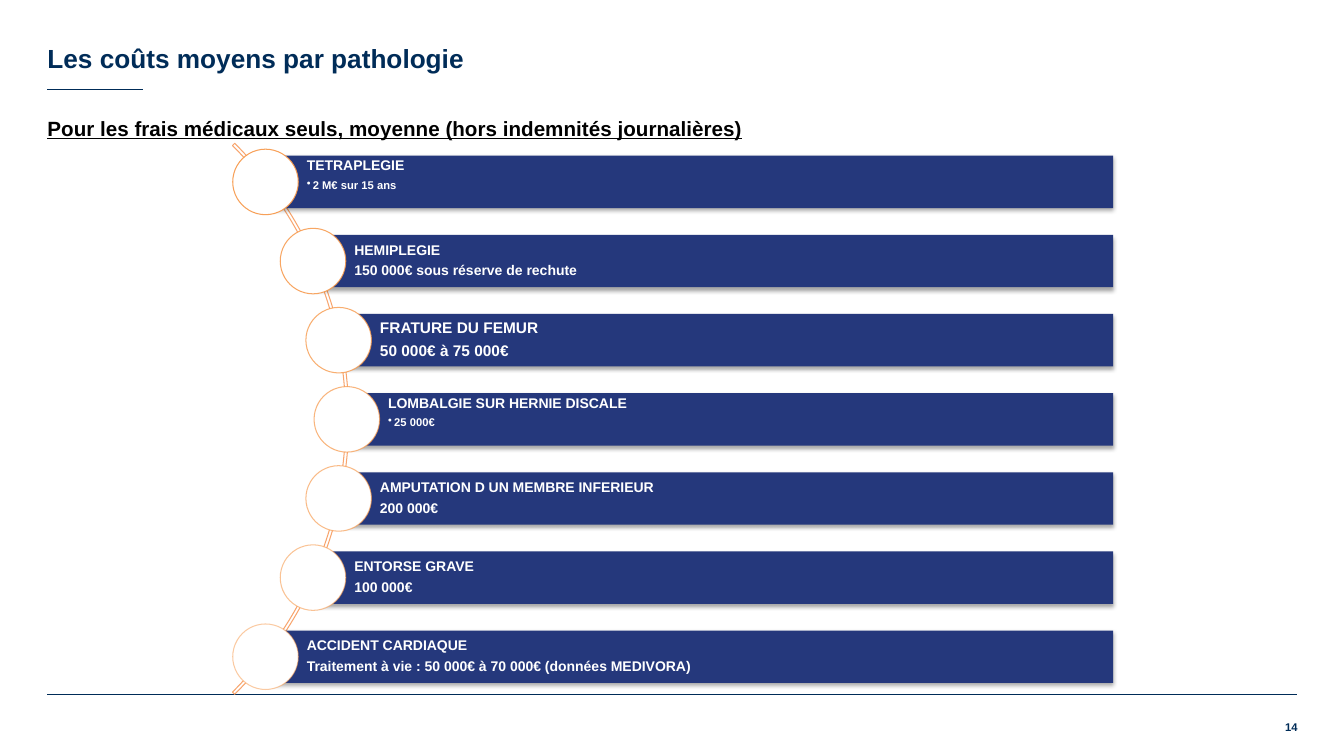
from math import sqrt

from lxml.etree import SubElement
from pptx import Presentation
from pptx.dml.color import RGBColor
from pptx.enum.shapes import MSO_CONNECTOR, MSO_SHAPE
from pptx.enum.text import MSO_ANCHOR, MSO_AUTO_SIZE, PP_ALIGN
from pptx.oxml.ns import qn
from pptx.util import Inches, Pt

HUES = {
    "navy": "002C58",
    "bar": "25387C",
    "arc": "F8A56E",
    "ring": "F79646",
    "white": "FFFFFF",
    "black": "000000",
}

COSTS = [
    ("TETRAPLEGIE", "2 M€ sur 15 ans", 10, True),
    ("HEMIPLEGIE", "150 000€ sous réserve de rechute", 10, False),
    ("FRATURE DU FEMUR", "50 000€ à 75 000€", 11, False),
    ("LOMBALGIE SUR HERNIE DISCALE", "25 000€", 10, True),
    ("AMPUTATION D UN MEMBRE INFERIEUR", "200 000€", 10, False),
    ("ENTORSE GRAVE", "100 000€", 10, False),
    ("ACCIDENT CARDIAQUE",
     "Traitement à vie : 50 000€ à 70 000€ (données MEDIVORA)", 10, False),
]

HUB_X, HUB_Y, ORBIT = -0.4, 4.16, 3.84
STEP, BAR_H, RING, RIGHT = 0.785, 0.52, 0.65, 11.04


def hue(name):
    return RGBColor.from_string(HUES[name])


def apply(item, form):
    for key, value in form.items():
        setattr(item, key, value)


def place(shape, *box):
    apply(shape, dict(zip(("left", "top", "width", "height"), map(Inches, box))))


def frame(shape, anchor, pads=(0, 0, 0, 0)):
    text = shape.text_frame
    names = ("margin_left", "margin_top", "margin_right", "margin_bottom")
    apply(text, {"word_wrap": True, "auto_size": MSO_AUTO_SIZE.NONE,
                 "vertical_anchor": anchor})
    apply(text, dict(zip(names, map(Inches, pads))))
    return text


def write(para, words, size, tint, **form):
    para.text = words
    apply(para.font, {"name": "Arial", "size": Pt(size), "bold": True, **form})
    para.font.color.rgb = hue(tint)


def bullet(para):
    props = para._p.get_or_add_pPr()
    props.set("marL", str(Inches(0.06)))
    props.set("indent", str(-Inches(0.06)))
    SubElement(props, qn("a:buChar")).set("char", "•")


def plain(para):
    props = para._p.get_or_add_pPr()
    props.set("marL", "0")
    props.set("indent", "0")
    SubElement(props, qn("a:buNone"))


def rule(slide, left, right, top):
    line = slide.shapes.add_connector(
        MSO_CONNECTOR.STRAIGHT, Inches(left), Inches(top), Inches(right), Inches(top))
    line.line.color.rgb = hue("navy")
    line.line.width = Pt(0.5)
    SubElement(line._element.spPr, qn("a:effectLst"))


def figure(slide, kind, box, fill=None, edge=None):
    shape = slide.shapes.add_shape(kind, *map(Inches, box))
    shape.shadow.inherit = False
    if fill:
        shape.fill.solid()
        shape.fill.fore_color.rgb = hue(fill)
    else:
        shape.fill.background()
    if edge:
        shape.line.color.rgb = hue(edge)
        shape.line.width = Pt(0.75)
    else:
        shape.line.fill.background()
    return shape


def fade(parent, share):
    SubElement(parent, qn("a:alpha")).set("val", str(round(share * 1000)))


def shade(shape):
    effects = shape._element.spPr.find(qn("a:effectLst"))
    cast = SubElement(effects, qn("a:outerShdw"), blurRad=str(Pt(3.1)),
                      dist=str(Pt(1.8)), dir="5400000", rotWithShape="0")
    fade(SubElement(cast, qn("a:srgbClr"), val=HUES["black"]), 35)


def cost(slide, index, name, price, size, listed):
    drop = (index - 3) * STEP
    left = HUB_X + sqrt(ORBIT ** 2 - drop ** 2)
    middle = HUB_Y + drop
    bar = figure(slide, MSO_SHAPE.RECTANGLE,
                 (left, middle - BAR_H / 2, RIGHT - left, BAR_H), "bar")
    shade(bar)
    anchor = MSO_ANCHOR.TOP if listed else MSO_ANCHOR.MIDDLE
    text = frame(bar, anchor, (0.41, 0.03, 0.03, 0.03))
    head, note = text.paragraphs[0], text.add_paragraph()
    form = {"alignment": PP_ALIGN.LEFT, "line_spacing": 0.9,
            "space_after": Pt(size * 0.4)}
    for para in (head, note):
        apply(para, form)
    if listed:
        apply(note, {"level": 1, "space_after": Pt(1.4)})
        bullet(note)
    write(head, name, size, "white")
    write(note, price, 8 if listed else size, "white")
    ring = figure(slide, MSO_SHAPE.OVAL,
                  (left - RING / 2, middle - RING / 2, RING, RING), "white", "ring")
    tint = ring._element.spPr.find(f"{qn('a:ln')}/{qn('a:solidFill')}/{qn('a:srgbClr')}")
    fade(tint, 90 - index * 40 / 6)


def main():
    deck = Presentation()
    apply(deck, {"slide_width": Inches(13.33), "slide_height": Inches(7.5)})
    slide = deck.slides.add_slide(deck.slide_layouts[1])

    rule(slide, 0.47, 12.86, 6.89)
    rule(slide, 0.47, 1.42, 0.89)

    title, body = slide.placeholders
    place(title, 0.47, 0, 12.39, 0.73)
    para = frame(title, MSO_ANCHOR.BOTTOM).paragraphs[0]
    para.alignment = PP_ALIGN.LEFT
    write(para, "Les coûts moyens par pathologie", 18.7, "navy")

    place(body, 0.47, 1.15, 10.92, 4.31)
    para = frame(body, MSO_ANCHOR.TOP).paragraphs[0]
    para.space_before = Pt(0)
    plain(para)
    write(para, "Pour les frais médicaux seuls, moyenne (hors indemnités journalières)",
          14.7, "black", underline=True)

    arc = figure(slide, MSO_SHAPE.BLOCK_ARC, (-4.27, 0.29, 7.73, 7.73), edge="arc")
    for spot, value in enumerate((189, 27, 0.004)):
        arc.adjustments[spot] = value

    for index, row in enumerate(COSTS):
        cost(slide, index, *row)

    page = slide.shapes.add_textbox(*map(Inches, (12.48, 7.15, 0.39, 0.2)))
    para = frame(page, MSO_ANCHOR.TOP).paragraphs[0]
    para.alignment = PP_ALIGN.RIGHT
    write(para, "14", 8, "navy")

    deck.save("out.pptx")


if __name__ == "__main__":
    main()
